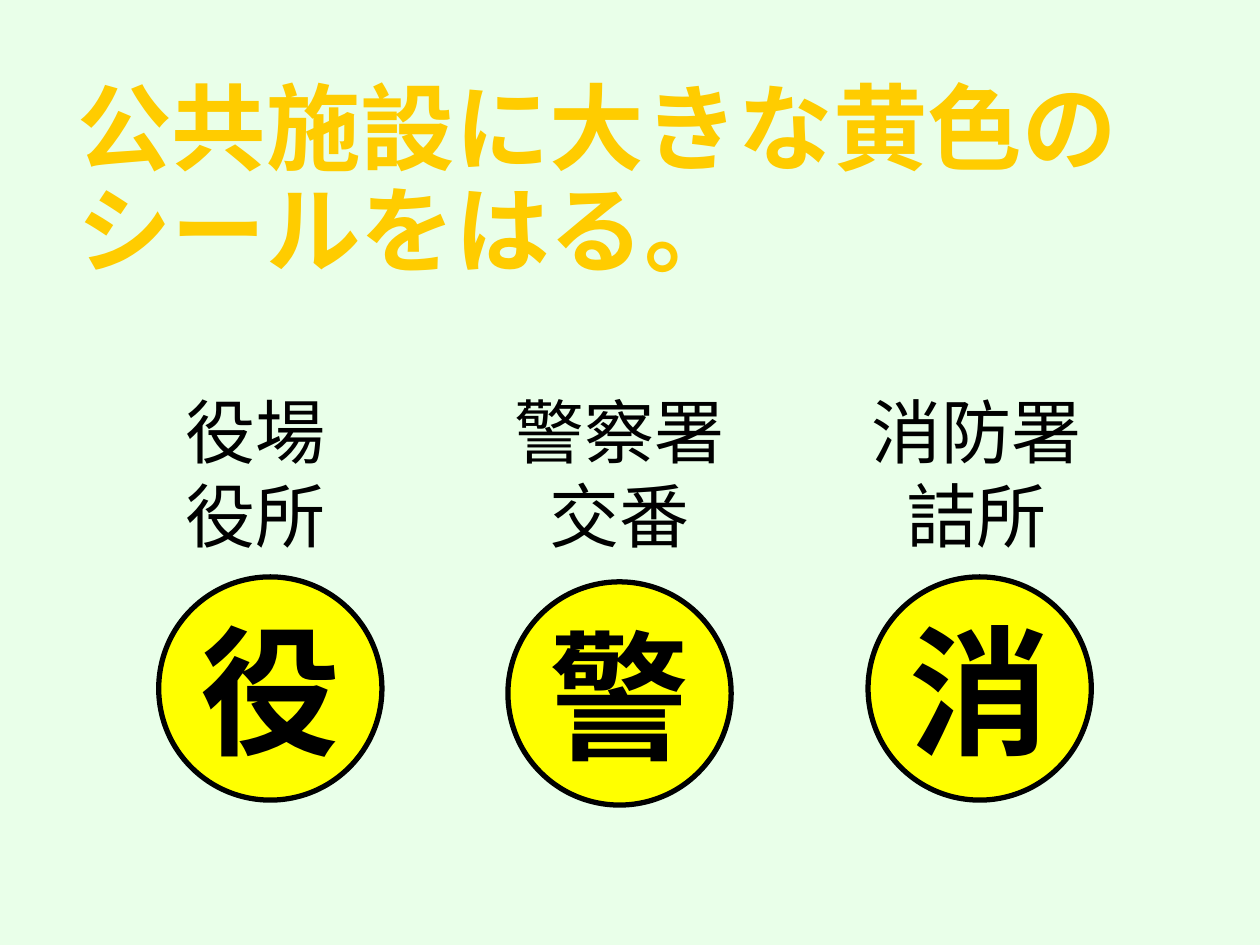
from dataclasses import dataclass

from lxml.etree import SubElement
from pptx import Presentation
from pptx.dml.color import RGBColor
from pptx.enum.shapes import MSO_SHAPE
from pptx.enum.text import MSO_ANCHOR, MSO_AUTO_SIZE, PP_ALIGN
from pptx.oxml.ns import qn
from pptx.slide import Slide
from pptx.text.text import _Paragraph as Para
from pptx.util import Cm, Pt

MINT = RGBColor(0xE9, 0xFF, 0xE9)
GOLD = RGBColor(0xFF, 0xCC, 0x00)
YELLOW = RGBColor(0xFF, 0xFF, 0x00)
BLACK = RGBColor(0x00, 0x00, 0x00)
FONT = "Noto Sans CJK JP"


@dataclass(frozen=True)
class Office:
    names: tuple[str, str]
    mark: str
    label_left: float
    label_width: float
    seal_left: float
    seal_top: float


OFFICES = (
    Office(("役場", "役所"), "役", 3.1, 4.11, 3.2, 11.63),
    Office(("警察署", "交番"), "警", 9.09, 6.81, 10.24, 11.73),
    Office(("消防署", "詰所"), "消", 16.61, 6.15, 17.5, 11.63),
)


def add_run(para: Para, text: str, size: int, color: RGBColor, bold: bool = False) -> None:
    run = para.add_run()
    run.text = text
    font = run.font
    font.size = Pt(size)
    font.bold = bold
    font.color.rgb = color
    font.name = FONT
    SubElement(run._r.get_or_add_rPr(), qn("a:ea")).set("typeface", FONT)


def draw_title(slide: Slide, text: str) -> None:
    title = slide.shapes.title
    title.left, title.top = Cm(1.3), Cm(1.52)
    title.width, title.height = Cm(23.44), Cm(6.6)
    frame = title.text_frame
    frame.word_wrap = True
    frame.auto_size = MSO_AUTO_SIZE.NONE
    frame.vertical_anchor = MSO_ANCHOR.TOP
    para = frame.paragraphs[0]
    para.alignment = PP_ALIGN.LEFT
    para.line_spacing = 0.9
    para.space_before = Pt(11)
    add_run(para, text, 54, GOLD, True)


def draw_label(slide: Slide, office: Office) -> None:
    box = slide.shapes.add_textbox(
        Cm(office.label_left), Cm(7.7), Cm(office.label_width), Cm(3.68)
    )
    frame = box.text_frame
    frame.word_wrap = True
    frame.auto_size = MSO_AUTO_SIZE.SHAPE_TO_FIT_TEXT
    for row, name in enumerate(office.names):
        para = frame.add_paragraph() if row else frame.paragraphs[0]
        para.alignment = PP_ALIGN.CENTER
        add_run(para, name, 40, BLACK)


def draw_seal(slide: Slide, office: Office) -> None:
    seal = slide.shapes.add_shape(
        MSO_SHAPE.OVAL, Cm(office.seal_left), Cm(office.seal_top), Cm(4.5), Cm(4.5)
    )
    seal.shadow.inherit = False
    seal.fill.solid()
    seal.fill.fore_color.rgb = YELLOW
    seal.line.color.rgb = BLACK
    seal.line.width = Pt(3)
    frame = seal.text_frame
    frame.word_wrap = False
    frame.vertical_anchor = MSO_ANCHOR.MIDDLE
    para = frame.paragraphs[0]
    para.alignment = PP_ALIGN.CENTER
    add_run(para, office.mark, 80, BLACK, True)


def main() -> None:
    deck = Presentation()
    deck.slide_width, deck.slide_height = Cm(25.4), Cm(19.05)
    slide = deck.slides.add_slide(deck.slide_layouts[5])
    slide.background.fill.solid()
    slide.background.fill.fore_color.rgb = MINT
    draw_title(slide, "公共施設に大きな黄色のシールをはる。")
    for office in OFFICES:
        draw_seal(slide, office)
        draw_label(slide, office)
    deck.save("out.pptx")


if __name__ == "__main__":
    main()
